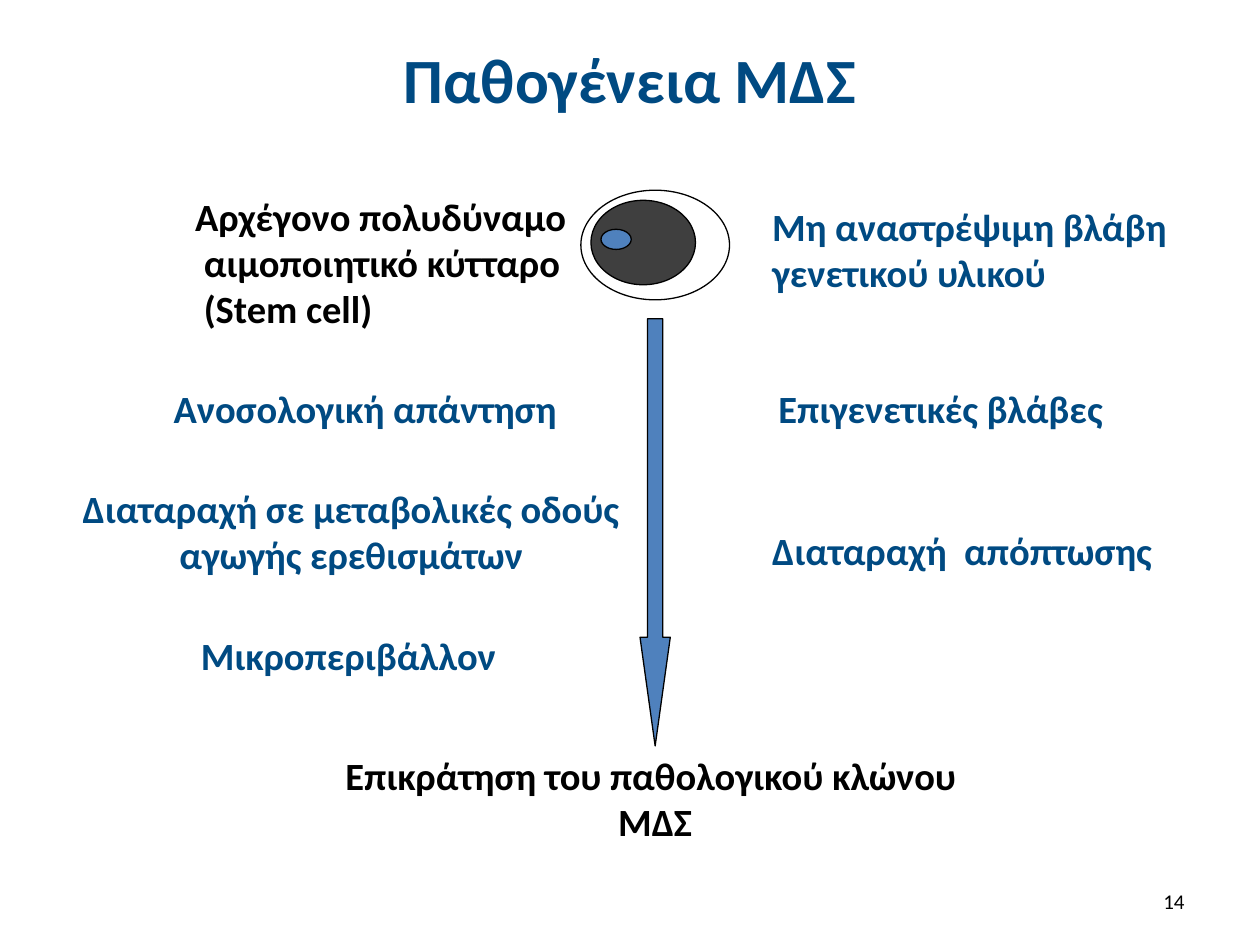
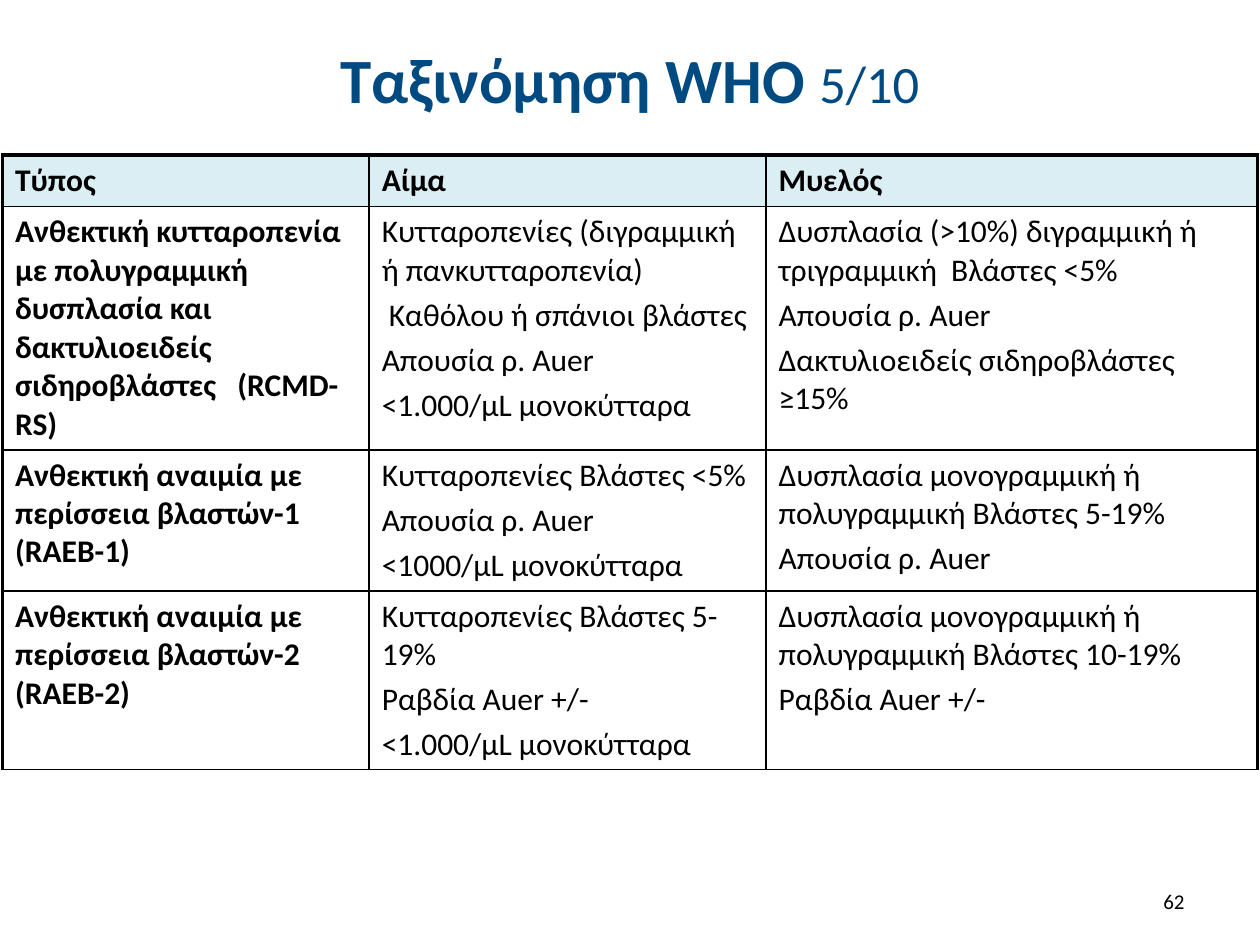
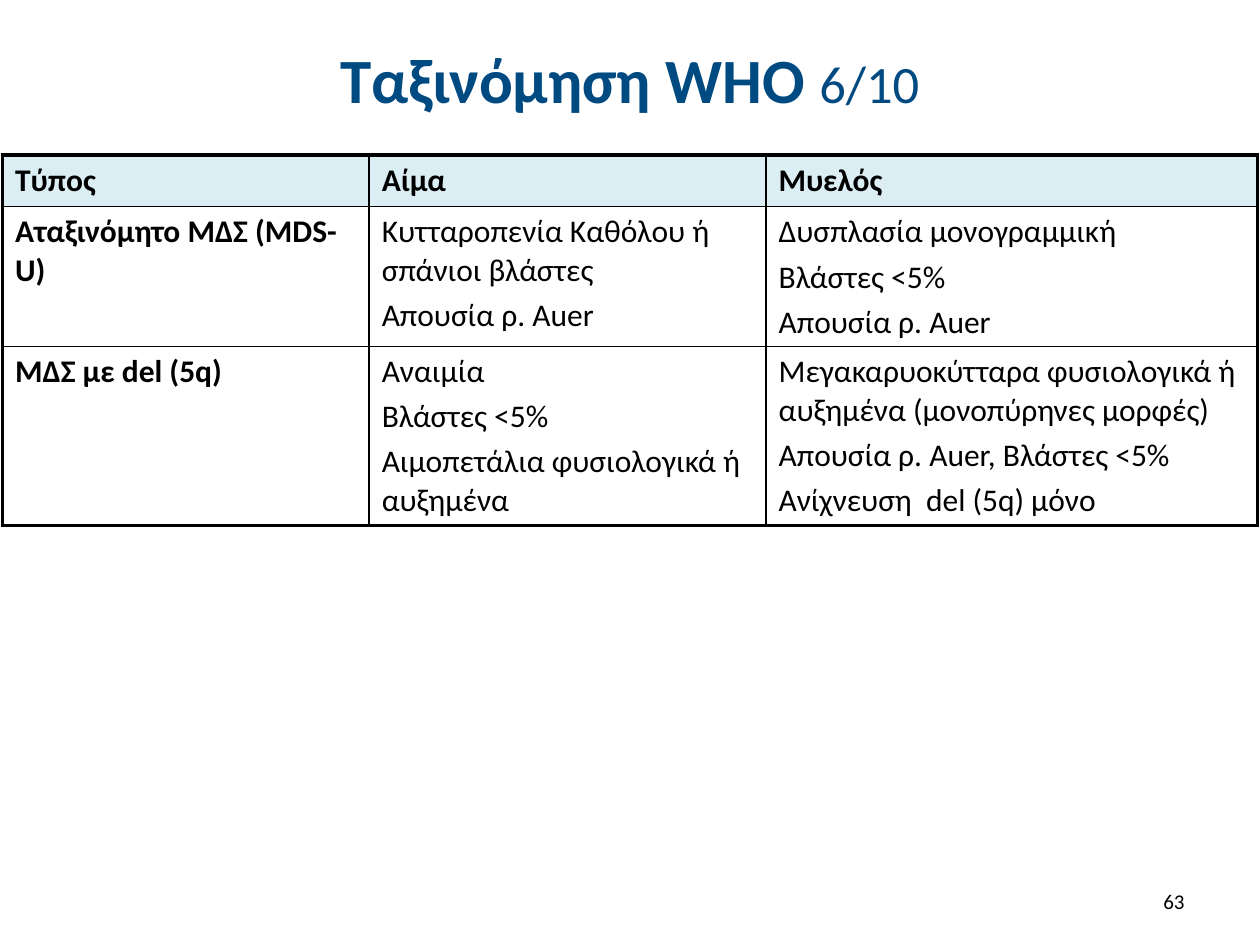
"""Build three slides on the pathogenesis and WHO classification of MDS."""
from dataclasses import dataclass
from typing import NamedTuple, Optional

from lxml.etree import SubElement
from pptx import Presentation
from pptx.dml.color import RGBColor
from pptx.enum.shapes import MSO_SHAPE as Shape
from pptx.enum.text import MSO_ANCHOR as Anchor, MSO_AUTO_SIZE as AutoSize, PP_ALIGN as Align
from pptx.oxml.ns import qn
from pptx.util import Inches, Pt


@dataclass(frozen=True)
class Theme:
    """Colours, font, type sizes and line widths of the deck."""
    font: str = "Calibri"
    navy: str = "004A82"
    black: str = "000000"
    blue: str = "4F81BD"
    dark: str = "3F3F3F"
    header: str = "DBEEF4"
    title: float = 36
    counter: float = 30
    label: float = 22
    cell: float = 18
    number: float = 12
    gap: float = 3.8
    thin: float = 1
    thick: float = 2.25
    outline: float = 0.75


T = Theme()


class Box(NamedTuple):
    """A place on the slide in inches."""
    left: float
    top: float
    width: float
    height: float

    def emu(self) -> list:
        """Give the four lengths for python-pptx."""
        return [Inches(v) for v in self]


class Label(NamedTuple):
    """A bold caption around the arrow."""
    box: Box
    lines: tuple
    color: str = T.navy
    align: Align = Align.LEFT
    wrap: bool = False


class Figure(NamedTuple):
    """An outlined preset shape."""
    kind: Shape
    box: Box
    fill: Optional[str] = None
    adjust: tuple = ()


class Classification(NamedTuple):
    """A table slide: counter, number, row heights, body rows and bottom line."""
    counter: str
    number: int
    heights: tuple
    rows: tuple
    bottom: float


TITLE_BOX = Box(0.5, 0.13, 9, 0.99)
NUMBER_BOX = Box(7.17, 6.95, 2.33, 0.4)
TABLE_LEFT, TABLE_TOP = 0.02, 1.23
COLUMNS = (2.91, 3.15, 3.9)
HEADINGS = (("Τύπος",), ("Αίμα",), ("Μυελός",))

CELL_AND_ARROW = (
    Figure(Shape.OVAL, Box(4.69, 1.59, 0.83, 0.67), T.dark),
    Figure(Shape.OVAL, Box(4.61, 1.51, 1.18, 0.87)),
    Figure(Shape.OVAL, Box(4.77, 1.82, 0.24, 0.16), T.blue),
    Figure(Shape.DOWN_ARROW, Box(5.08, 2.53, 0.24, 3.39), T.blue, (0.5, 3.59)),
)

LABELS = (
    Label(Box(1.45, 1.48, 3.18, 1.21),
          ("Αρχέγονο πολυδύναμο", " αιμοποιητικό κύτταρο", " (Stem cell)"), T.black),
    Label(Box(6.03, 1.56, 3.44, 0.84), ("Μη αναστρέψιμη βλάβη", "γενετικού υλικού")),
    Label(Box(2.58, 5.92, 5.24, 0.84),
          ("Επικράτηση του παθολογικού κλώνου ", "ΜΔΣ"), T.black, Align.CENTER),
    Label(Box(1.28, 3.01, 3.35, 0.47), ("Ανοσολογική απάντηση",)),
    Label(Box(6.08, 3.01, 2.88, 0.47), ("Επιγενετικές βλάβες",)),
    Label(Box(6.03, 4.13, 3.32, 0.47), ("Διαταραχή  απόπτωσης",)),
    Label(Box(0.53, 3.8, 4.58, 0.84),
          ("Διαταραχή σε μεταβολικές οδούς ", "αγωγής ερεθισμάτων "), align=Align.CENTER),
    Label(Box(1.15, 4.97, 3.3, 0.47), ("Μικροπεριβάλλον ",), align=Align.CENTER, wrap=True),
)

CLASSIFICATIONS = (
    Classification("5/10", 62, (0.41, 1.93, 1.12, 1.42), (
        (("Ανθεκτική κυτταροπενία με πολυγραμμική δυσπλασία και δακτυλιοειδείς "
          "σιδηροβλάστες   (RCMD-RS)",),
         ("Κυτταροπενίες (διγραμμική ή πανκυτταροπενία)", " Καθόλου ή σπάνιοι βλάστες",
          "Απουσία ρ. Auer", "<1.000/μL μονοκύτταρα"),
         ("Δυσπλασία (>10%) διγραμμική ή τριγραμμική  Βλάστες <5%", "Απουσία ρ. Auer",
          "Δακτυλιοειδείς σιδηροβλάστες ≥15%")),
        (("Ανθεκτική αναιμία με περίσσεια βλαστών-1 (RAEB-1)",),
         ("Κυτταροπενίες Βλάστες <5%", "Απουσία ρ. Auer", "<1000/μL μονοκύτταρα"),
         ("Δυσπλασία μονογραμμική ή πολυγραμμική Βλάστες 5-19%", "Απουσία ρ. Auer")),
        (("Ανθεκτική αναιμία με περίσσεια βλαστών-2 (RAEB-2)",),
         ("Κυτταροπενίες Βλάστες 5-19%", "Ραβδία Auer +/-", "<1.000/μL μονοκύτταρα"),
         ("Δυσπλασία μονογραμμική ή πολυγραμμική Βλάστες 10-19%", "Ραβδία Auer +/-")),
    ), T.thin),
    Classification("6/10", 63, (0.41, 1.11, 1.42), (
        (("Αταξινόμητο ΜΔΣ (MDS-U)",),
         ("Κυτταροπενία Καθόλου ή σπάνιοι βλάστες", "Απουσία ρ. Auer"),
         ("Δυσπλασία μονογραμμική", "Βλάστες <5%", "Απουσία ρ. Auer")),
        (("ΜΔΣ με del (5q)",),
         ("Αναιμία", "Βλάστες <5%", "Αιμοπετάλια φυσιολογικά ή αυξημένα"),
         ("Μεγακαρυοκύτταρα φυσιολογικά ή αυξημένα (μονοπύρηνες μορφές)",
          "Απουσία ρ. Auer, Βλάστες <5%", "Ανίχνευση  del (5q) μόνο")),
    ), T.thick),
)


def add_run(p, text: str, size: float, color: str, bold: bool = False) -> None:
    """Add one formatted run to a paragraph."""
    r = p.add_run()
    r.text = text
    r.font.name, r.font.size, r.font.bold = T.font, Pt(size), bold
    r.font.color.rgb = RGBColor.from_string(color)


def add_lines(tf, lines: tuple, size: float, color: str, bold: bool = False,
              align: Align = Align.LEFT, gap: float = 0) -> None:
    """Write one paragraph per line, with a gap between them."""
    for i, line in enumerate(lines):
        p = tf.add_paragraph() if i else tf.paragraphs[0]
        p.alignment = align
        p.space_before = Pt(gap if i else 0)
        add_run(p, line, size, color, bold)


def add_slide(prs, title: str, number: int, counter: str = ""):
    """Add a slide with its title and slide number."""
    s = prs.slides.add_slide(prs.slide_layouts[5])
    sp = s.shapes.title
    sp.left, sp.top, sp.width, sp.height = TITLE_BOX.emu()
    tf = sp.text_frame
    tf.auto_size, tf.vertical_anchor = AutoSize.NONE, Anchor.MIDDLE
    add_lines(tf, (title,), T.title, T.navy, True, Align.CENTER)
    if counter:
        add_run(tf.paragraphs[0], counter, T.counter, T.navy)
    tf = s.shapes.add_textbox(*NUMBER_BOX.emu()).text_frame
    tf.word_wrap, tf.vertical_anchor = True, Anchor.MIDDLE
    add_lines(tf, (str(number),), T.number, T.black, align=Align.RIGHT)
    return s


def add_figure(s, fig: Figure) -> None:
    """Draw one outlined shape."""
    sp = s.shapes.add_shape(fig.kind, *fig.box.emu())
    sp.shadow.inherit = False
    for i, value in enumerate(fig.adjust):
        sp.adjustments[i] = value
    if fig.fill:
        sp.fill.solid()
        sp.fill.fore_color.rgb = RGBColor.from_string(fig.fill)
    else:
        sp.fill.background()
    sp.line.color.rgb = RGBColor.from_string(T.black)
    sp.line.width = Pt(T.outline)


def add_label(s, label: Label) -> None:
    """Draw one caption."""
    tf = s.shapes.add_textbox(*label.box.emu()).text_frame
    tf.word_wrap, tf.auto_size = label.wrap, AutoSize.SHAPE_TO_FIT_TEXT
    add_lines(tf, label.lines, T.label, label.color, True, label.align)


def set_borders(cell, **widths: float) -> None:
    """Give a cell solid borders, keyed L, R, T and B in points."""
    tc_pr = cell._tc.get_or_add_tcPr()
    for side, width in widths.items():
        ln = SubElement(tc_pr, qn(f"a:ln{side}"), w=str(Pt(width)))
        fill = SubElement(ln, qn("a:solidFill"))
        SubElement(fill, qn("a:srgbClr"), val=T.black)


def add_classification(prs, c: Classification) -> None:
    """Build one slide with a classification table."""
    s = add_slide(prs, "Ταξινόμηση WHO ", c.number, c.counter)
    rows = (HEADINGS, *c.rows)
    box = Box(TABLE_LEFT, TABLE_TOP, sum(COLUMNS), sum(c.heights))
    table = s.shapes.add_table(len(rows), len(COLUMNS), *box.emu()).table
    table.first_row = table.horz_banding = False
    for column, width in zip(table.columns, COLUMNS):
        column.width = Inches(width)
    last_row, last_col = len(rows) - 1, len(COLUMNS) - 1
    for i, row in enumerate(rows):
        table.rows[i].height = Inches(c.heights[i])
        for j, lines in enumerate(row):
            cell = table.cell(i, j)
            set_borders(cell,
                        L=T.thin if j else T.thick,
                        R=T.thick if j == last_col else T.thin,
                        T=T.thin if i else T.thick,
                        B=c.bottom if i == last_row else T.thin)
            if i:
                cell.fill.background()
            else:
                cell.fill.solid()
                cell.fill.fore_color.rgb = RGBColor.from_string(T.header)
            add_lines(cell.text_frame, lines, T.cell, T.black, i == 0 or j == 0, gap=T.gap)


def main() -> None:
    """Build and save the deck."""
    prs = Presentation()
    prs.slide_width, prs.slide_height = Inches(10), Inches(7.5)
    s = add_slide(prs, "Παθογένεια ΜΔΣ", 14)
    for fig in CELL_AND_ARROW:
        add_figure(s, fig)
    for label in LABELS:
        add_label(s, label)
    for c in CLASSIFICATIONS:
        add_classification(prs, c)
    prs.save("out.pptx")


if __name__ == "__main__":
    main()
